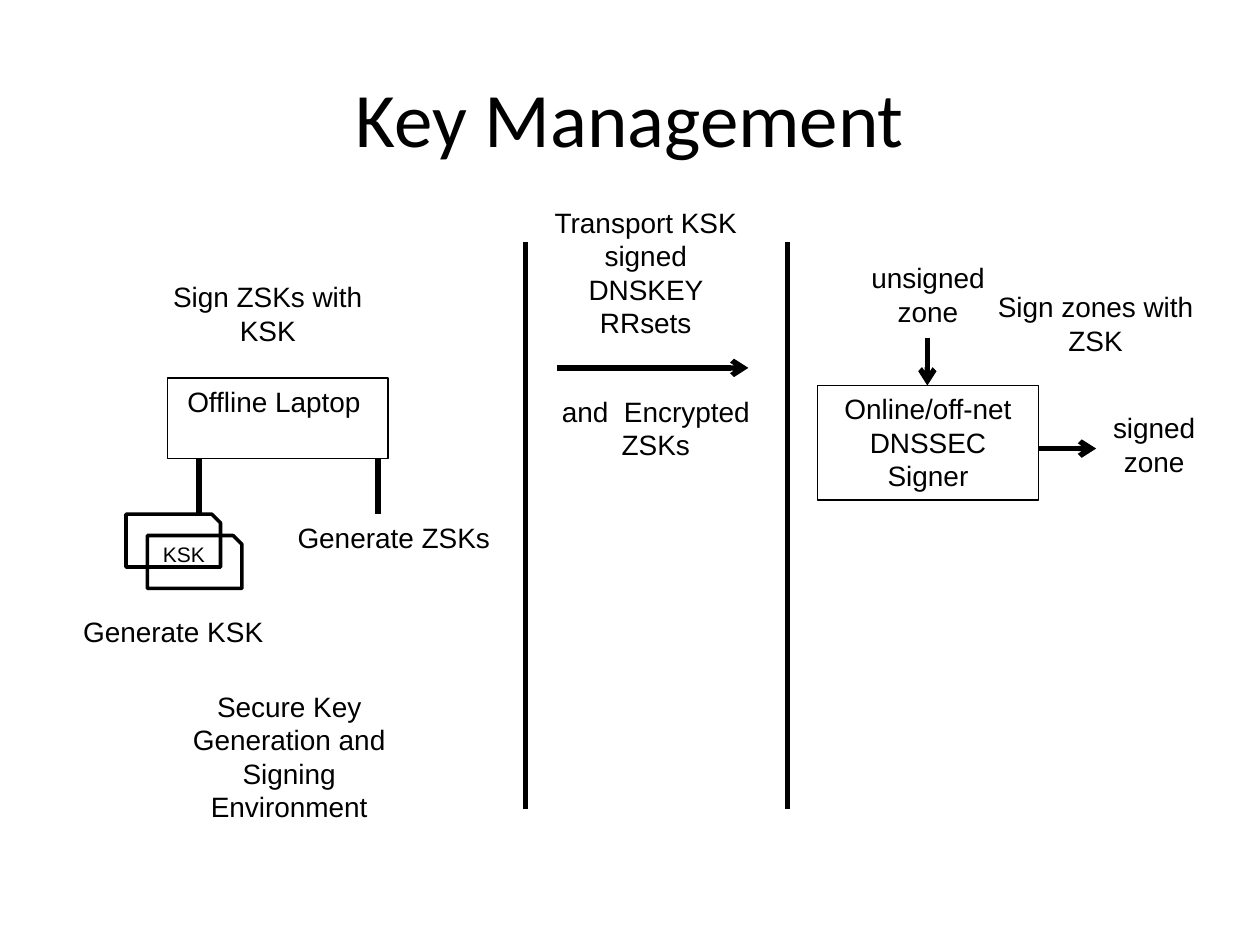
from pptx import Presentation
from pptx.dml.color import RGBColor
from pptx.enum.shapes import MSO_CONNECTOR, MSO_SHAPE
from pptx.enum.text import MSO_ANCHOR, PP_ALIGN
from pptx.oxml.ns import qn
from pptx.util import Inches, Pt
from lxml.etree import SubElement

COLORS = {"ink": "000000", "paper": "FFFFFF"}


class SlideBuilder:
    def __init__(self, prs):
        self.s = prs.slides.add_slide(prs.slide_layouts[6])
        self.ink = RGBColor.from_string(COLORS["ink"])
        self.s.background.fill.solid()
        self.s.background.fill.fore_color.rgb = RGBColor.from_string(COLORS["paper"])

    def set_text(self, sp, text, size, font, anchor):
        tf = sp.text_frame
        tf.word_wrap = True
        tf.vertical_anchor = anchor
        tf.text = text
        for p in tf.paragraphs:
            p.alignment = PP_ALIGN.CENTER
            p.font.size = Pt(size)
            p.font.name = font
            p.font.color.rgb = self.ink

    def text(self, x, y, w, h, text, size=16, font="Arial", anchor=MSO_ANCHOR.TOP):
        sp = self.s.shapes.add_textbox(Inches(x), Inches(y), Inches(w), Inches(h))
        self.set_text(sp, text, size, font, anchor)

    def box(self, x, y, w, h, text="", shape=MSO_SHAPE.RECTANGLE, width=0.75):
        sp = self.s.shapes.add_shape(shape, Inches(x), Inches(y), Inches(w), Inches(h))
        sp.shadow.inherit = False
        sp.fill.background()
        sp.line.color.rgb = self.ink
        sp.line.width = Pt(width)
        if text:
            self.set_text(sp, text, 16, "Arial", MSO_ANCHOR.TOP)

    def line(self, x1, y1, x2, y2, arrow=False):
        c = self.s.shapes.add_connector(
            MSO_CONNECTOR.STRAIGHT, Inches(x1), Inches(y1), Inches(x2), Inches(y2))
        c.line.color.rgb = self.ink
        c.line.width = Pt(3)
        spPr = c._element.spPr
        if arrow:
            SubElement(spPr.find(qn("a:ln")), qn("a:tailEnd"), type="arrow")
        SubElement(spPr, qn("a:effectLst"))


def main():
    prs = Presentation()
    prs.slide_width, prs.slide_height = Inches(10), Inches(7.5)
    b = SlideBuilder(prs)
    col = 1.75

    b.text(0.5, 0.3, 9, 1.25, "Key Management", 44, "Calibri", MSO_ANCHOR.MIDDLE)

    b.box(1.33, 3, col, 0.64, "Offline Laptop ")
    b.box(6.49, 3.06, col, 0.91, "Online/off-net DNSSEC Signer")

    for x, y, w, h, label in [
        (4.33, 3.08, col, 0.64, "and  Encrypted ZSKs"),
        (1.25, 2.17, col, 0.64, "Sign ZSKs with KSK"),
        (4.25, 1.58, col, 1.18, "Transport KSK signed DNSKEY RRsets"),
        (7.82, 2.25, col, 0.64, "Sign zones with ZSK"),
        (8.7, 3.21, 0.92, 0.64, "signed\nzone"),
        (6.78, 2.02, 1.17, 0.64, "unsigned\nzone"),
        (1.42, 5.42, col, 1.18, "Secure Key Generation and Signing Environment"),
        (0.5, 4.83, col, 0.37, "Generate KSK"),
        (2.25, 4.08, col, 0.37, "Generate ZSKs"),
    ]:
        b.text(x, y, w, h, label)

    b.text(1.17, 4.25, 0.58, 0.3, "KSK", 12)
    for x, y in [(1, 4.08), (1.17, 4.25)]:
        b.box(x, y, 0.75, 0.42, shape=MSO_SHAPE.SNIP_1_RECTANGLE, width=2)

    for x in (4.17, 6.25):
        b.line(x, 1.92, x, 6.42)
    for x in (1.58, 3):
        b.line(x, 3.64, x, 4.08)
    for ends in [(7.36, 2.68, 7.36, 3.06), (8.24, 3.56, 8.7, 3.56), (4.42, 2.92, 5.94, 2.92)]:
        b.line(*ends, arrow=True)

    prs.save("out.pptx")


if __name__ == "__main__":
    main()
